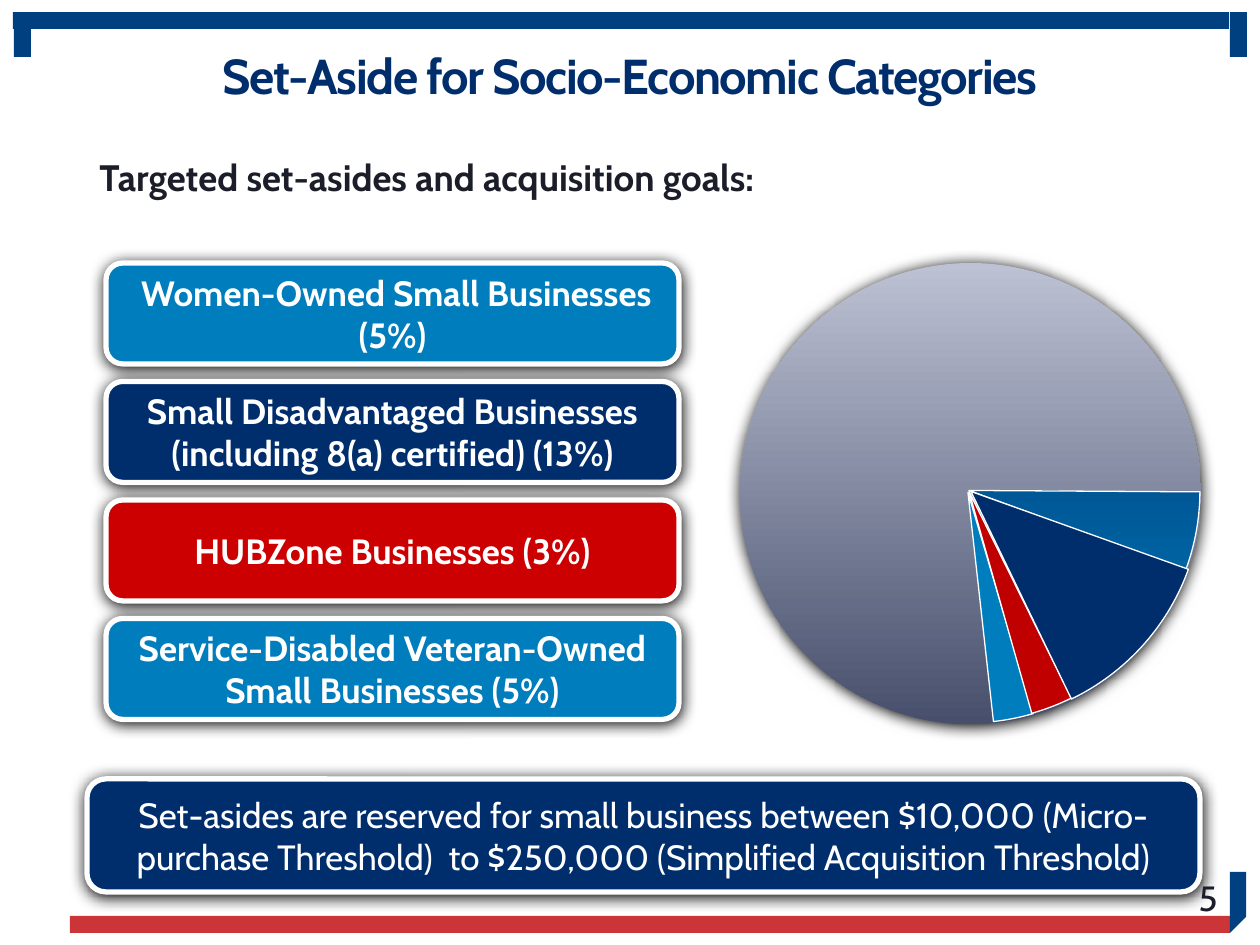
from pptx import Presentation
from pptx.util import Emu, Pt
from pptx.dml.color import RGBColor
from pptx.enum.shapes import MSO_SHAPE as Kind
from pptx.enum.text import PP_ALIGN as Align, MSO_ANCHOR as Anchor
from pptx.oxml.ns import qn
from lxml.etree import SubElement as Sub

PX = 914400 // 126
HUE = {"frame": "003F80", "stripe": "CC3538", "navy": "002E6D", "blue": "007DBC",
       "red": "CC0000", "wine": "C00000", "pale": "BCC1D3", "slate": "474F6C",
       "ink": "1B1E29", "white": "FFFFFF"}

# Content
TITLE = "Set-Aside for Socio-Economic Categories"
LEAD = "Targeted set-asides and acquisition goals:"
GOALS = [
    (" Women-Owned Small Businesses (5%)", "blue"),
    ("Small Disadvantaged Businesses (including 8(a) certified) (13%)", "navy"),
    ("HUBZone Businesses (3%)", "red"),
    ("Service-Disabled Veteran-Owned Small Businesses (5%)", "blue"),
]
NOTE = ("Set-asides are reserved for small business between $10,000 (Micro- "
        "purchase Threshold)  to $250,000 (Simplified Acquisition Threshold)")
NUMBER = "5"
BARS = [  # left, top, width, height, colour
    (13, 12, 1216, 17, "frame"), (1230, 12, 17, 45, "frame"),
    (14, 12, 17, 45, "frame"), (70, 916, 1160, 17, "stripe"),
]
CORNER = [(1230, 872), (1246, 872), (1246, 917), (1230, 933)]
DISC = (740, 263, 461, 461)
WEDGES = [  # left, top, start and end in degrees, fill
    (737, 262, 73.58, 83.65, "blue"),
    (738, 261, 63.63, 74.2, "wine"),
    (738, 260, 0.35, 20.11, ("navy", "blue")),
    (740, 261, 19.7, 64.18, "navy"),
]
GOAL_TOP, GOAL_STEP = 263, 118.5

deck = Presentation()
deck.slide_width, deck.slide_height = Emu(1260 * PX), Emu(945 * PX)
slide = deck.slides.add_slide(deck.slide_layouts[6])
shapes = slide.shapes


def rgb(name):
    return RGBColor.from_string(HUE[name])


def emu(*sizes):
    return [Emu(round(s * PX)) for s in sizes]


def paint(shape, fill, line=0):
    shape.shadow.inherit = False
    if isinstance(fill, tuple):
        shape.fill.gradient()
        shape.fill.gradient_angle = 270
        for stop, name in zip(shape.fill.gradient_stops, fill):
            stop.color.rgb = rgb(name)
            stop.position = fill.index(name)
    else:
        shape.fill.solid()
        shape.fill.fore_color.rgb = rgb(fill)
    if line:
        shape.line.color.rgb = rgb("white")
        shape.line.width = Pt(line)
    else:
        shape.line.fill.background()


def draw(kind, box, fill, line=0):
    shape = shapes.add_shape(kind, *emu(*box))
    paint(shape, fill, line)
    return shape


def shade(shape):
    effects = shape._element.spPr.find(qn("a:effectLst"))
    drop = Sub(effects, qn("a:outerShdw"), blurRad="107950", dist="12700",
               dir="5400000", algn="ctr", rotWithShape="0")
    Sub(drop, qn("a:srgbClr"), val="000000")


def write(shape, text, size, color, bold=False, align=Align.CENTER,
          anchor=Anchor.MIDDLE):
    frame = shape.text_frame
    frame.word_wrap = True
    frame.vertical_anchor = anchor
    para = frame.paragraphs[0]
    para.alignment = align
    run = para.add_run()
    run.text = text
    font = run.font
    font.name, font.size, font.bold = "Cabin", Pt(size), bold
    font.color.rgb = rgb(color)
    return para


def label(box, *args, **kw):
    return write(shapes.add_textbox(*emu(*box)), *args, **kw)


def pill(box, text, fill, bold):
    shape = draw(Kind.ROUNDED_RECTANGLE, box, fill, 3)
    shade(shape)
    write(shape, text, 20, "white", bold)


# Frame
for *box, fill in BARS:
    draw(Kind.RECTANGLE, box, fill)
path = shapes.build_freeform(*CORNER[0], scale=PX)
path.add_line_segments(CORNER[1:], close=True)
paint(path.convert_to_shape(), "frame")

# Headings
para = label((29, 47, 1201, 64), TITLE, 28, "navy", True)
para.line_spacing = 0.9
para.runs[0].font._element.set("spc", "-80")
para = label((87, 154, 1140, 60), LEAD, 21, "ink", True, Align.LEFT, Anchor.TOP)
para.line_spacing = 0.9

# Goals and note
for i, (text, fill) in enumerate(GOALS):
    pill((106, GOAL_TOP + i * GOAL_STEP, 573, 101), text, fill, True)
pill((87, 779, 1113, 113), NOTE, "navy", False)

# Pie: shaded disc with wedges on top
shade(draw(Kind.OVAL, DISC, ("pale", "slate")))
for left, top, start, end, fill in WEDGES:
    wedge = draw(Kind.PIE, (left, top, 462, 461), fill, 0.75)
    # One adjustment unit is 100000 / 60000 degrees
    wedge.adjustments[0], wedge.adjustments[1] = start * 0.6, end * 0.6

# Slide number
label((946, 873, 284, 50), NUMBER, 20, "ink", align=Align.RIGHT)

deck.save("out.pptx")
